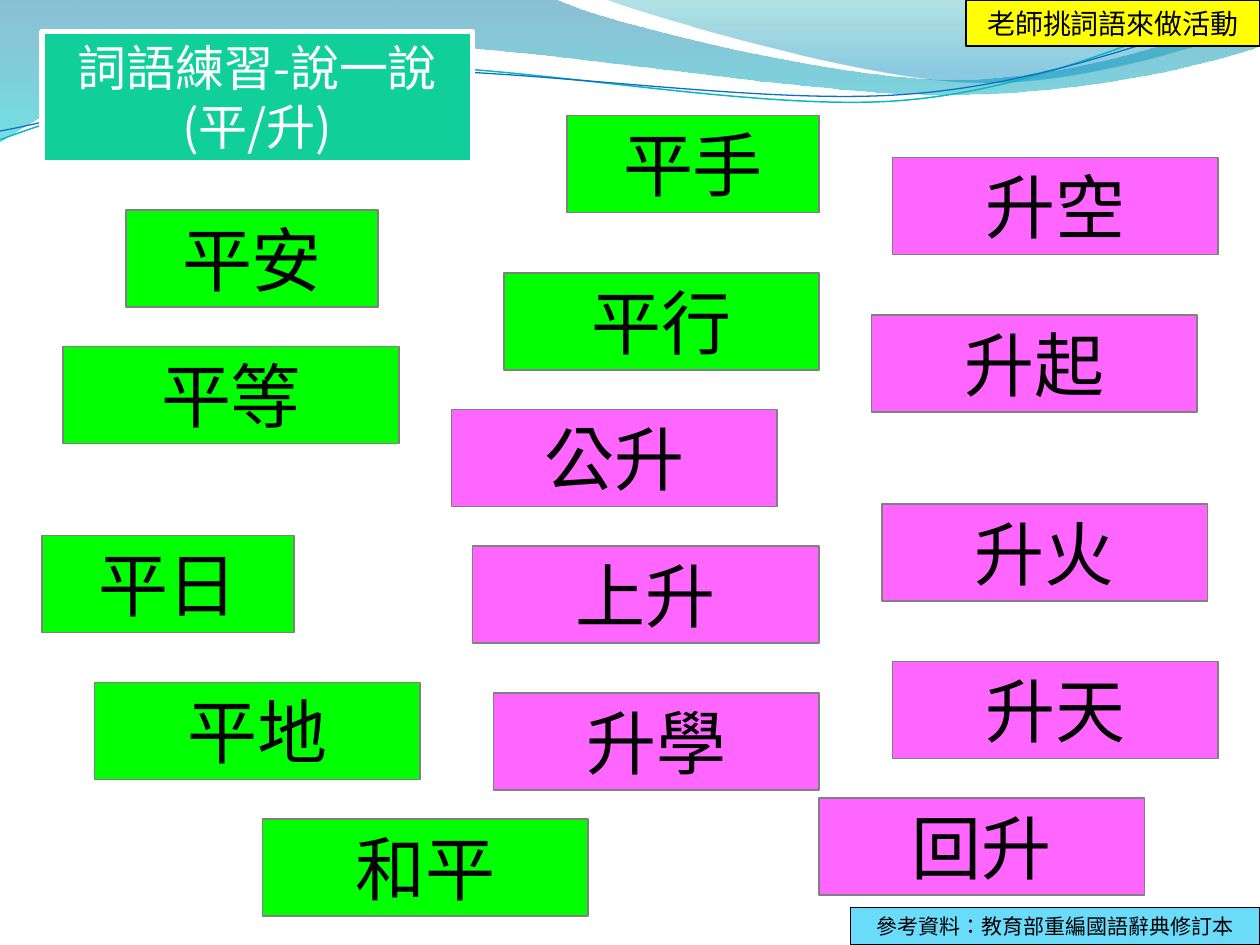
from lxml.etree import SubElement
from pptx import Presentation
from pptx.dml.color import RGBColor
from pptx.enum.shapes import MSO_SHAPE
from pptx.enum.text import MSO_ANCHOR, MSO_AUTO_SIZE, PP_ALIGN
from pptx.oxml.ns import qn
from pptx.util import Inches, Pt

COLS, ROWS = 120, 90
FONT = "Noto Sans CJK SC"
COLORS = {
    "ping": "00FF00", "sheng": "FF66FF", "border": "808080", "ink": "000000",
    "title": "10CF9B", "white": "FFFFFF", "note": "FFFF00", "source": "6BDBFA",
    "deep": "0074A1", "aqua": "00C6CF", "teal": "00A1A9", "blue": "008BBF",
    "upper": "0AB8BF", "lower": "0F6FC6",
}
STYLES = {
    "ping": {"fill": "ping", "line": "border", "size": 40},
    "sheng": {"fill": "sheng", "line": "border", "size": 40},
    "title": {"fill": "title", "line": "white", "weight": 3, "size": 28, "ink": "white"},
    "note": {"fill": "note", "line": "ink", "size": 16},
    "source": {"fill": "source", "line": "ink", "size": 12},
}
FRAME = {
    "word_wrap": True,
    "auto_size": MSO_AUTO_SIZE.SHAPE_TO_FIT_TEXT,
    "vertical_anchor": MSO_ANCHOR.TOP,
}
CARD_ROWS = 9.25
CARDS = [
    ("平行", "ping", 48, 26, 30), ("平日", "ping", 4, 51, 24),
    ("平安", "ping", 12, 20, 24), ("平等", "ping", 6, 33, 32),
    ("上升", "sheng", 45, 52, 33), ("平地", "ping", 9, 65, 31),
    ("回升", "sheng", 78, 76, 31), ("和平", "ping", 25, 78, 31),
    ("平手", "ping", 54, 11, 24), ("升空", "sheng", 85, 15, 31),
    ("升學", "sheng", 47, 66, 31), ("公升", "sheng", 43, 39, 31),
    ("升火", "sheng", 84, 48, 31), ("升起", "sheng", 83, 30, 31),
    ("升天", "sheng", 85, 63, 31),
]
BANDS = [
    ([[(0, 0)], [(4.4, -0.01)],
      [(4.76, 0.17), (6.64, 0.63), (7.58, 0.63)],
      [(8.53, 0.63), (9.58, 0.26), (10, 0.09)], [(10.01, 0.36)],
      [(9.83, 0.44), (8.7, 0.76), (7.46, 0.75)],
      [(6.22, 0.75), (3.82, 0.28), (2.57, 0.34)],
      [(1.29, 0.36), (0.46, 0.83), (-0.01, 1.13)]],
     [(0, "deep", 45), (1, "aqua", 55)]),
    ([[(4.79, -0.01)],
      [(5.09, 0.11), (6.82, 0.62), (7.69, 0.65)],
      [(8.56, 0.69), (9.61, 0.32), (10, 0.21)], [(10, 0)]],
     [(0, "teal", 30), (0.8, "blue", 45)]),
]
STRANDS = [
    ([[(0, 1.11)], [(0.48, 0.93), (1.58, 0.57), (2.77, 0.52)],
      [(3.95, 0.47), (5.93, 0.89), (7.13, 0.8)],
      [(8.33, 0.71), (9.38, 0.15), (9.98, -0.02)]], "upper", 0.85),
    ([[(0, 1.04)], [(0.47, 0.96), (1.64, 0.61), (2.83, 0.56)],
      [(4.03, 0.51), (5.97, 0.84), (7.17, 0.75)],
      [(8.36, 0.67), (9.41, 0.21), (10, 0.06)]], "lower", 0.75),
]


def rgb(name):
    """Return the named colour."""
    return RGBColor.from_string(COLORS[name])


def grid(prs, box):
    """Turn a box of columns and rows into slide lengths."""
    x, y, w, h = box
    col, row = prs.slide_width / COLS, prs.slide_height / ROWS
    return [round(v) for v in (x * col, y * row, w * col, h * row)]


def bend(sp, segments):
    """Join each run of three line points into one cubic curve."""
    path = next(sp._element.iter(qn("a:path")))
    lines = iter(path.findall(qn("a:lnTo")))
    for seg in segments[1:]:
        group = [next(lines) for _ in seg]
        if len(group) == 3:
            curve = SubElement(path, qn("a:cubicBezTo"))
            group[0].addprevious(curve)
            for line in group:
                curve.append(line[0])
                path.remove(line)


def add_curve(prs, slide, box, segments, close):
    """Draw a curve given in tenths of the box width and shares of its height."""
    left, top, width, height = grid(prs, box)
    points = [(round(left + x * width / 10), round(top + y * height))
              for seg in segments for x, y in seg]
    fb = slide.shapes.build_freeform(*points[0])
    fb.add_line_segments(points[1:], close=close)
    sp = fb.convert_to_shape()
    sp.shadow.inherit = False
    bend(sp, segments)
    return sp


def add_waves(prs, slide, box):
    """Place the translucent bands and the thin strands of the header."""
    for segments, stops in BANDS:
        sp = add_curve(prs, slide, box, segments, True)
        sp.line.fill.background()
        sp.fill.gradient()
        sp.fill.gradient_angle = 270
        for stop, (pos, color, _) in zip(sp.fill.gradient_stops, stops):
            stop.position = pos
            stop.color.rgb = rgb(color)
        for clr, (_, _, alpha) in zip(sp._element.spPr.iter(qn("a:srgbClr")), stops):
            SubElement(clr, qn("a:alpha"), val=str(alpha * 1000))
    for segments, color, weight in STRANDS:
        sp = add_curve(prs, slide, box, segments, False)
        sp.fill.background()
        sp.line.color.rgb = rgb(color)
        sp.line.width = Pt(weight)


def add_label(prs, slide, box, text, style):
    """Place a filled box with centred text."""
    fmt = STYLES[style]
    sp = slide.shapes.add_shape(MSO_SHAPE.RECTANGLE, *grid(prs, box))
    sp.shadow.inherit = False
    sp.fill.solid()
    sp.fill.fore_color.rgb = rgb(fmt["fill"])
    sp.line.color.rgb = rgb(fmt["line"])
    sp.line.width = Pt(fmt.get("weight", 0.75))
    tf = sp.text_frame
    for name, value in FRAME.items():
        setattr(tf, name, value)
    p = tf.paragraphs[0]
    p.alignment = PP_ALIGN.CENTER
    r = p.add_run()
    r.text = text
    for name, value in {"name": FONT, "size": Pt(fmt["size"])}.items():
        setattr(r.font, name, value)
    r.font.color.rgb = rgb(fmt.get("ink", "ink"))
    props = r._r.get_or_add_rPr()
    props.set("lang", "zh-TW")
    SubElement(props, qn("a:ea"), typeface=FONT)


def add_cards(prs, slide, box):
    """Scatter the word cards of both characters over the box."""
    left, top = box[:2]
    for word, style, col, row, cols in CARDS:
        add_label(prs, slide, (left + col, top + row, cols, CARD_ROWS), word, style)


def main():
    """Build the slide and save it."""
    prs = Presentation()
    prs.slide_width, prs.slide_height = Inches(10), Inches(7.5)
    slide = prs.slides.add_slide(prs.slide_layouts[6])
    add_waves(prs, slide, (0, 0, COLS, 12))
    add_cards(prs, slide, (0, 0, COLS, ROWS))
    add_label(prs, slide, (4, 3, 41, 12.5), "詞語練習-說一說(平/升)", "title")
    add_label(prs, slide, (92, 0, 28, 4.4), "老師挑詞語來做活動", "note")
    add_label(prs, slide, (81, 86.4, 39, 3.6), "參考資料：教育部重編國語辭典修訂本", "source")
    prs.save("out.pptx")


if __name__ == "__main__":
    main()
